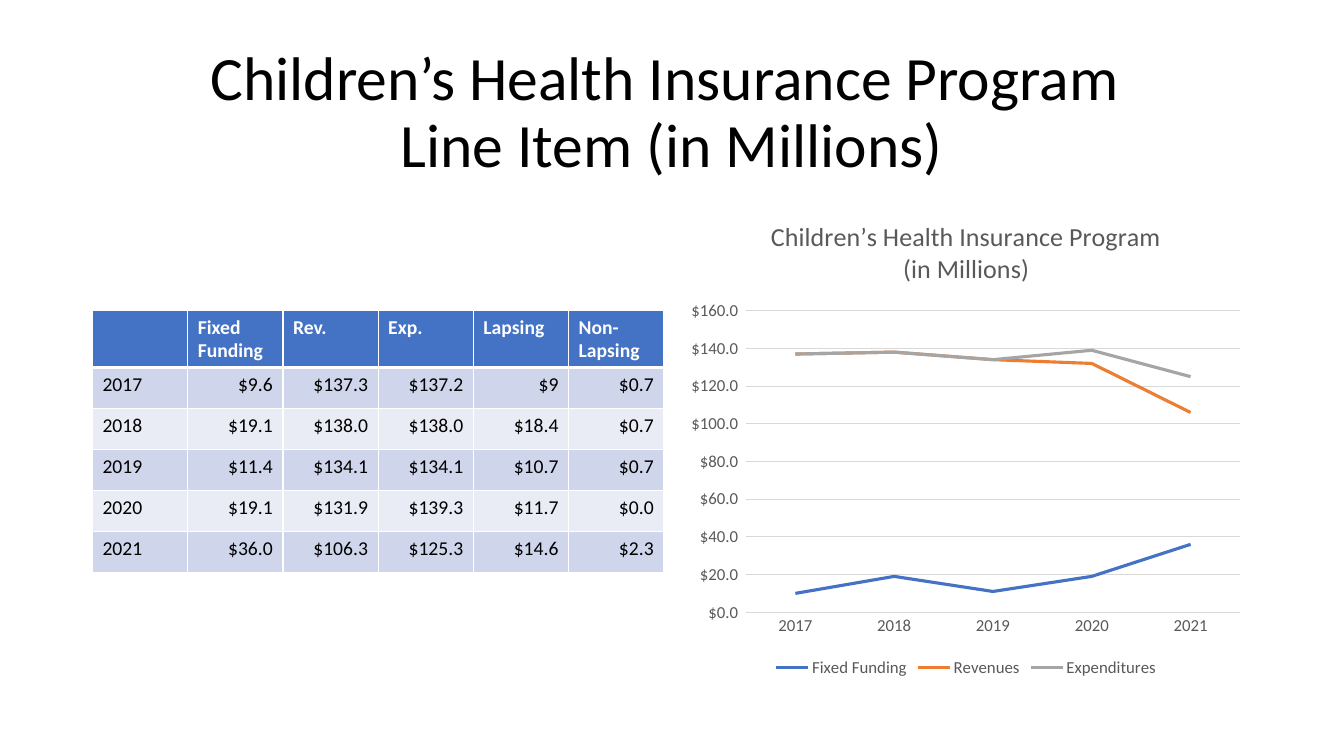
from dataclasses import dataclass

from lxml.etree import SubElement
from pptx import Presentation
from pptx.chart.chart import Chart
from pptx.chart.data import CategoryChartData
from pptx.dml.color import RGBColor
from pptx.enum.chart import XL_CHART_TYPE, XL_LEGEND_POSITION, XL_TICK_MARK
from pptx.enum.text import MSO_ANCHOR, PP_ALIGN
from pptx.oxml.ns import qn
from pptx.slide import Slide
from pptx.table import _Cell as Cell
from pptx.text.text import Font
from pptx.util import Cm, Length, Pt

BLACK = RGBColor(0x00, 0x00, 0x00)
WHITE = RGBColor(0xFF, 0xFF, 0xFF)
GREY = RGBColor(0x59, 0x59, 0x59)
RULE = RGBColor(0xD9, 0xD9, 0xD9)
BLUE = RGBColor(0x44, 0x72, 0xC4)
ORANGE = RGBColor(0xED, 0x7D, 0x31)
SILVER = RGBColor(0xA5, 0xA5, 0xA5)
BANDS = (RGBColor(0xCF, 0xD5, 0xEA), RGBColor(0xE9, 0xEB, 0xF5))

HEAD_FONT = {"name": "Calibri", "size": Pt(44)}
CELL_FONT = {"name": "Calibri", "size": Pt(14), "bold": False}
TOP_FONT = CELL_FONT | {"bold": True}
NAME_FONT = {"name": "Calibri", "size": Pt(18.6), "bold": False}
AXIS_FONT = {"name": "Calibri", "size": Pt(12)}
MONEY = '"$"#,##0.0_);[Red]\\("$"#,##0.0\\)'


@dataclass(frozen=True)
class Box:
    left: float
    top: float
    width: float
    height: float

    def place(self) -> tuple[Length, ...]:
        return Cm(self.left), Cm(self.top), Cm(self.width), Cm(self.height)


@dataclass(frozen=True)
class Trend:
    name: str
    column: int
    color: RGBColor


HEAD_BOX = Box(2.33, 1.03, 29.21, 3.68)
GRID_BOX = Box(2.33, 7.82, 14.4, 6.2)
PLOT_BOX = Box(17.15, 5.07, 14.4, 12.1)
# Plot area, measured from the chart's corner
INNER = Box(1.65, 2.76, 12.45, 7.6)

ROWS = (
    ("", "Fixed Funding", "Rev.", "Exp.", "Lapsing", "Non-Lapsing"),
    ("2017", "$9.6", "$137.3", "$137.2", "$9", "$0.7"),
    ("2018", "$19.1", "$138.0", "$138.0", "$18.4", "$0.7"),
    ("2019", "$11.4", "$134.1", "$134.1", "$10.7", "$0.7"),
    ("2020", "$19.1", "$131.9", "$139.3", "$11.7", "$0.0"),
    ("2021", "$36.0", "$106.3", "$125.3", "$14.6", "$2.3"),
)
TRENDS = (
    Trend("Fixed Funding", 1, BLUE),
    Trend("Revenues", 2, ORANGE),
    Trend("Expenditures", 3, SILVER),
)


def set_all(item: object, values: dict) -> None:
    for key, value in values.items():
        setattr(item, key, value)


def set_font(font: Font, values: dict, color: RGBColor) -> None:
    set_all(font, values)
    font.color.rgb = color


def add_head(slide: Slide) -> None:
    frame = slide.shapes.add_textbox(*HEAD_BOX.place()).text_frame
    set_all(frame, {"word_wrap": True, "vertical_anchor": MSO_ANCHOR.MIDDLE})
    part = frame.paragraphs[0]
    part.text = "Children’s Health Insurance Program \vLine Item (in Millions)"
    set_all(part, {"alignment": PP_ALIGN.CENTER, "line_spacing": 0.9})
    for run in part.runs:
        set_font(run.font, HEAD_FONT, BLACK)


def set_edges(cell: Cell, sides: dict[str, float]) -> None:
    props = cell._tc.get_or_add_tcPr()
    for spot, (side, width) in enumerate(sides.items()):
        edge = SubElement(props, qn(f"a:ln{side}"), w=str(Pt(width)))
        props.insert(spot, edge)
        SubElement(SubElement(edge, qn("a:solidFill")), qn("a:srgbClr"), val=str(WHITE))


def add_grid(slide: Slide) -> None:
    table = slide.shapes.add_table(len(ROWS), len(ROWS[0]), *GRID_BOX.place()).table
    for r, row in enumerate(ROWS):
        for c, text in enumerate(row):
            cell = table.cell(r, c)
            cell.text = text
            cell.fill.solid()
            cell.fill.fore_color.rgb = BANDS[(r - 1) % 2] if r else BLUE
            # A thick edge parts the header from the years
            set_edges(cell, {"L": 1, "R": 1, "T": 3 if r == 1 else 1, "B": 1 if r else 3})
            part = cell.text_frame.paragraphs[0]
            part.alignment = PP_ALIGN.RIGHT if r and c else PP_ALIGN.LEFT
            for run in part.runs:
                set_font(run.font, CELL_FONT if r else TOP_FONT, BLACK if r else WHITE)


def set_inner(chart: Chart) -> None:
    area = chart._chartSpace.chart.plotArea
    for old in area.findall(qn("c:layout")):
        area.remove(old)
    layout = SubElement(area, qn("c:layout"))
    area.insert(0, layout)
    manual = SubElement(layout, qn("c:manualLayout"))
    values = {
        "layoutTarget": "inner", "xMode": "edge", "yMode": "edge",
        "x": INNER.left / PLOT_BOX.width, "y": INNER.top / PLOT_BOX.height,
        "w": INNER.width / PLOT_BOX.width, "h": INNER.height / PLOT_BOX.height,
    }
    for key, value in values.items():
        SubElement(manual, qn(f"c:{key}")).set("val", str(value))


def add_plot(slide: Slide) -> None:
    years = ROWS[1:]
    data = CategoryChartData(number_format=MONEY)
    data.categories = [row[0] for row in years]
    for trend in TRENDS:
        data.add_series(trend.name, [round(float(row[trend.column][1:])) for row in years])
    chart = slide.shapes.add_chart(XL_CHART_TYPE.LINE, *PLOT_BOX.place(), data).chart
    set_font(chart.font, AXIS_FONT, GREY)

    # Chart title and legend
    chart.has_title = True
    frame = chart.chart_title.text_frame
    frame.text = "Children’s Health Insurance Program\n(in Millions)"
    for part in frame.paragraphs:
        set_font(part.runs[0].font, NAME_FONT, GREY)
    chart.has_legend = True
    set_all(chart.legend, {"position": XL_LEGEND_POSITION.BOTTOM, "include_in_layout": False})
    set_font(chart.legend.font, AXIS_FONT, GREY)

    # Axes and grid lines
    years_axis, money_axis = chart.category_axis, chart.value_axis
    for axis in (years_axis, money_axis):
        set_all(axis, {"major_tick_mark": XL_TICK_MARK.NONE, "minor_tick_mark": XL_TICK_MARK.NONE})
        set_font(axis.tick_labels.font, AXIS_FONT, GREY)
    set_all(money_axis, {"minimum_scale": 0, "maximum_scale": 160, "major_unit": 20,
                         "has_major_gridlines": True})
    set_all(money_axis.tick_labels, {"number_format": MONEY, "number_format_is_linked": False})
    money_axis.format.line.fill.background()
    for line in (years_axis.format.line, money_axis.major_gridlines.format.line):
        line.color.rgb = RULE
        line.width = Pt(0.75)

    # Trend lines
    chart.plots[0].vary_by_categories = False
    for trend, series in zip(TRENDS, chart.plots[0].series):
        series.smooth = False
        series.format.line.color.rgb = trend.color
        series.format.line.width = Pt(2.25)
    set_inner(chart)


def main() -> None:
    deck = Presentation()
    set_all(deck, {"slide_width": Cm(33.87), "slide_height": Cm(19.05)})
    slide = deck.slides.add_slide(deck.slide_layouts[6])
    add_head(slide)
    add_grid(slide)
    add_plot(slide)
    deck.save("out.pptx")


if __name__ == "__main__":
    main()
